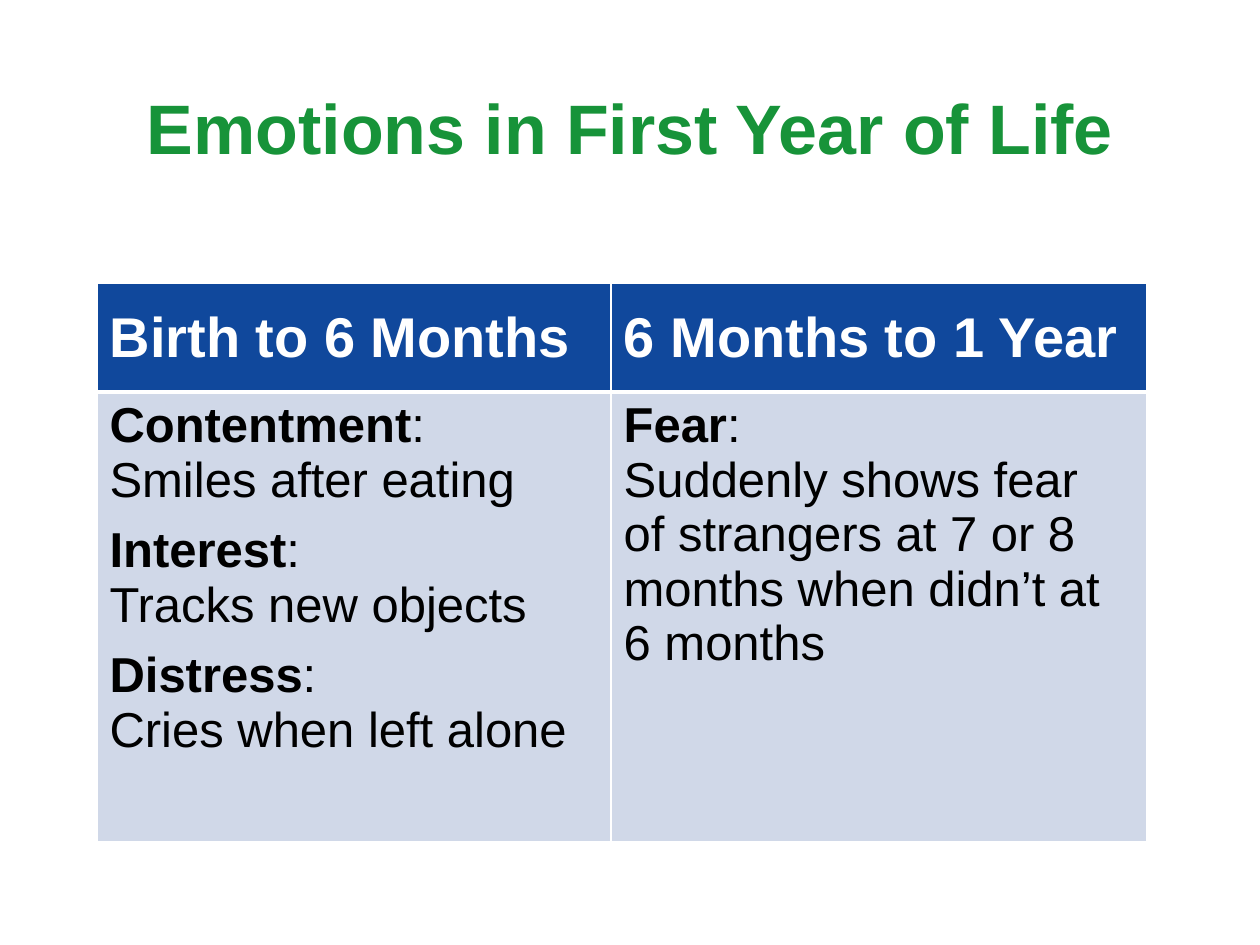
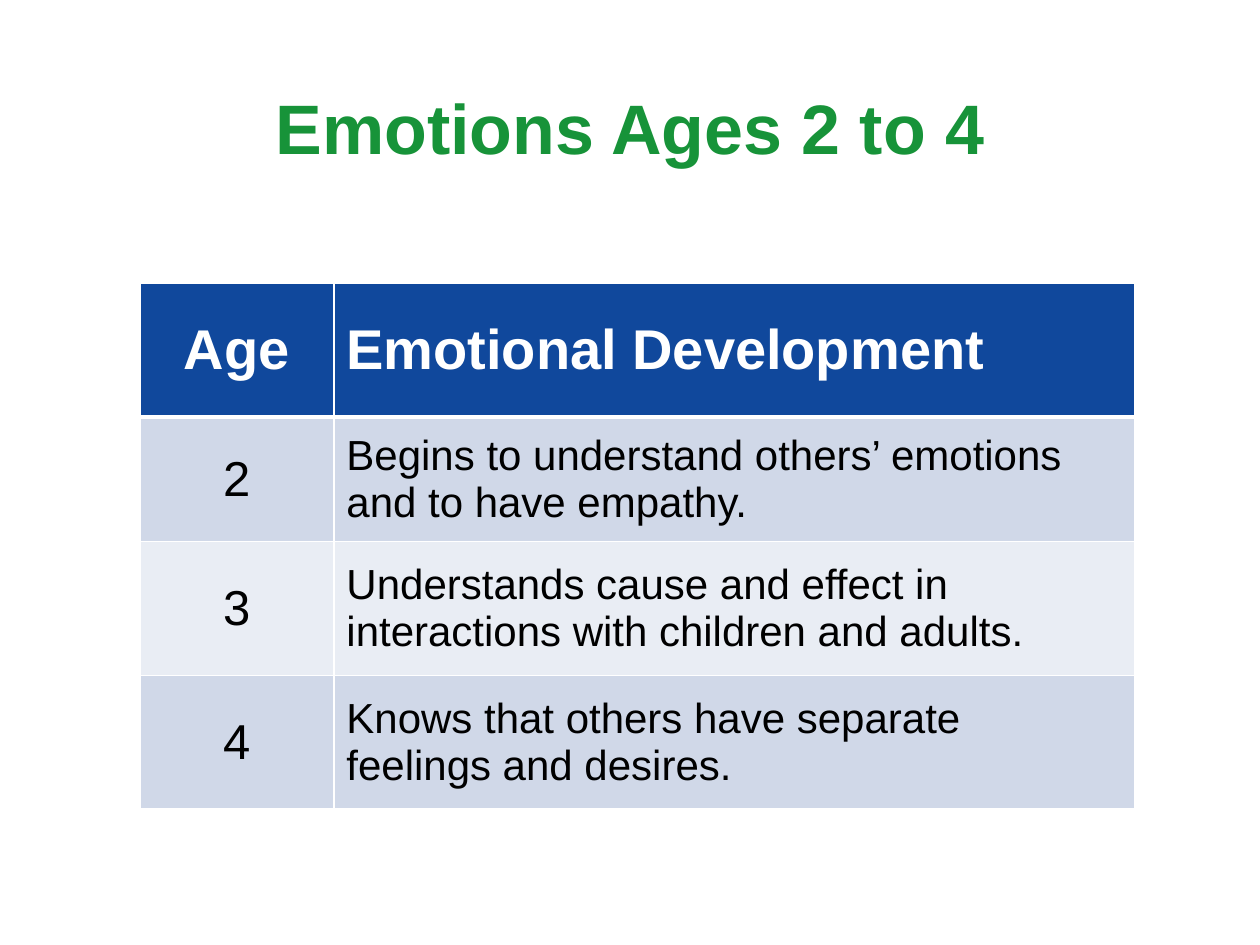
from dataclasses import dataclass

from lxml import etree
from pptx import Presentation
from pptx.dml.color import RGBColor
from pptx.enum.text import MSO_ANCHOR, PP_ALIGN
from pptx.oxml.ns import qn
from pptx.util import Inches, Pt

LEFT, CENTER = PP_ALIGN.LEFT, PP_ALIGN.CENTER
TOP, MIDDLE = MSO_ANCHOR.TOP, MSO_ANCHOR.MIDDLE
TITLE_ONLY = 5
GRID_COLUMNS, GRID_ROWS = 100, 75


@dataclass(frozen=True)
class Theme:
    font: str = "Arial"
    title: str = "179339"
    header: str = "10489C"
    bands: tuple = ("D0D8E8", "E9EDF4")
    light: str = "FFFFFF"
    dark: str = "000000"
    title_size: int = 40
    header_size: int = 32
    body_size: int = 28
    detail_size: int = 24
    thin: int = 1
    thick: int = 3
    entry_gap: int = 9


class SlideBuilder:
    def __init__(self, deck, theme):
        self.deck = deck
        self.theme = theme
        self.page = None

    def across(self, columns):
        return round(self.deck.slide_width * columns / GRID_COLUMNS)

    def down(self, rows):
        return round(self.deck.slide_height * rows / GRID_ROWS)

    def style(self, para, size, color, align=LEFT, bold=None):
        para.alignment = align
        font = para.font
        font.name, font.size, font.bold = self.theme.font, Pt(size), bold
        font.color.rgb = RGBColor.from_string(color)

    def add_text(self, para, text, bold=None):
        for number, line in enumerate(text.split("\n")):
            if number:
                para.add_line_break()
            span = para.add_run()
            span.text = line
            if bold is not None:
                span.font.bold = bold

    def new_page(self, title):
        self.page = self.deck.slides.add_slide(self.deck.slide_layouts[TITLE_ONLY])
        box = self.page.shapes.title
        box.left, box.top = 0, self.down(3.8)
        box.width, box.height = self.across(GRID_COLUMNS), self.down(12.5)
        box.text_frame.vertical_anchor = MIDDLE
        para = box.text_frame.paragraphs[0]
        self.add_text(para, title)
        self.style(para, self.theme.title_size, self.theme.title, CENTER, True)

    def table(self, left, top, widths, heights):
        frame = self.page.shapes.add_table(
            len(heights), len(widths), self.across(left), self.down(top),
            self.across(sum(widths)), self.down(sum(heights)))
        table = frame.table
        for column, width in zip(table.columns, widths):
            column.width = self.across(width)
        for row, height in zip(table.rows, heights):
            row.height = self.down(height)
        for row_number, row in enumerate(table.rows):
            for cell in row.cells:
                self.paint(cell, row_number)
        return table

    def paint(self, cell, row_number):
        theme = self.theme
        widths = dict.fromkeys(("lnL", "lnR", "lnT", "lnB"), theme.thin)
        if row_number == 0:
            widths["lnB"] = theme.thick
        elif row_number == 1:
            widths["lnT"] = theme.thick
        properties = cell._tc.get_or_add_tcPr()
        for side, width in widths.items():
            line = etree.SubElement(properties, qn(f"a:{side}"), w=str(Pt(width)))
            fill = etree.SubElement(line, qn("a:solidFill"))
            etree.SubElement(fill, qn("a:srgbClr"), val=theme.light)
        color = theme.bands[(row_number - 1) % 2] if row_number else theme.header
        cell.fill.solid()
        cell.fill.fore_color.rgb = RGBColor.from_string(color)

    def header(self, cell, text, align=LEFT):
        self.label(cell, text, self.theme.header_size, self.theme.light, align, True)

    def label(self, cell, text, size, color, align=LEFT, bold=False):
        cell.vertical_anchor = MIDDLE
        para = cell.text_frame.paragraphs[0]
        self.add_text(para, text)
        self.style(para, size, color, align, bold)

    def entries(self, cell, entries):
        cell.vertical_anchor = TOP
        frame = cell.text_frame
        for number, (emotion, description) in enumerate(entries):
            para = frame.add_paragraph() if number else frame.paragraphs[0]
            self.add_text(para, emotion, True)
            self.add_text(para, ":\n" + description, False)
            self.style(para, self.theme.body_size, self.theme.dark)
            para.space_after = Pt(self.theme.entry_gap)


def first_year(builder):
    builder.new_page("Emotions in First Year of Life")
    periods = {
        "Birth to 6 Months": [
            ("Contentment", "Smiles after eating"),
            ("Interest", "Tracks new objects"),
            ("Distress", "Cries when left alone"),
        ],
        "6 Months to 1 Year": [
            ("Fear", "Suddenly shows fear\n"
                     "of strangers at 7 or 8 months when didn’t at 6 months"),
        ],
    }
    table = builder.table(7.7, 22.5, (40.8, 42.5), (8.6, 35.7))
    for column, (period, emotions) in enumerate(periods.items()):
        builder.header(table.cell(0, column), period)
        builder.entries(table.cell(1, column), emotions)


def ages_two_to_four(builder):
    theme = builder.theme
    builder.new_page("Emotions Ages 2 to 4")
    stages = {
        "2": "Begins to understand others’ emotions and to have empathy.",
        "3": "Understands cause and effect in interactions with children and adults.",
        "4": "Knows that others have separate\nfeelings and desires.",
    }
    table = builder.table(11.1, 22.5, (15.4, 63.6), (10.6, 9.9, 10.6, 10.6))
    builder.header(table.cell(0, 0), "Age", CENTER)
    builder.header(table.cell(0, 1), "Emotional Development")
    for row, (age, development) in enumerate(stages.items(), start=1):
        builder.label(table.cell(row, 0), age, theme.body_size, theme.dark, CENTER)
        builder.label(table.cell(row, 1), development, theme.detail_size, theme.dark)


def main():
    deck = Presentation()
    deck.slide_width, deck.slide_height = Inches(10), Inches(7.5)
    builder = SlideBuilder(deck, Theme())
    first_year(builder)
    ages_two_to_four(builder)
    deck.save("out.pptx")


if __name__ == "__main__":
    main()
